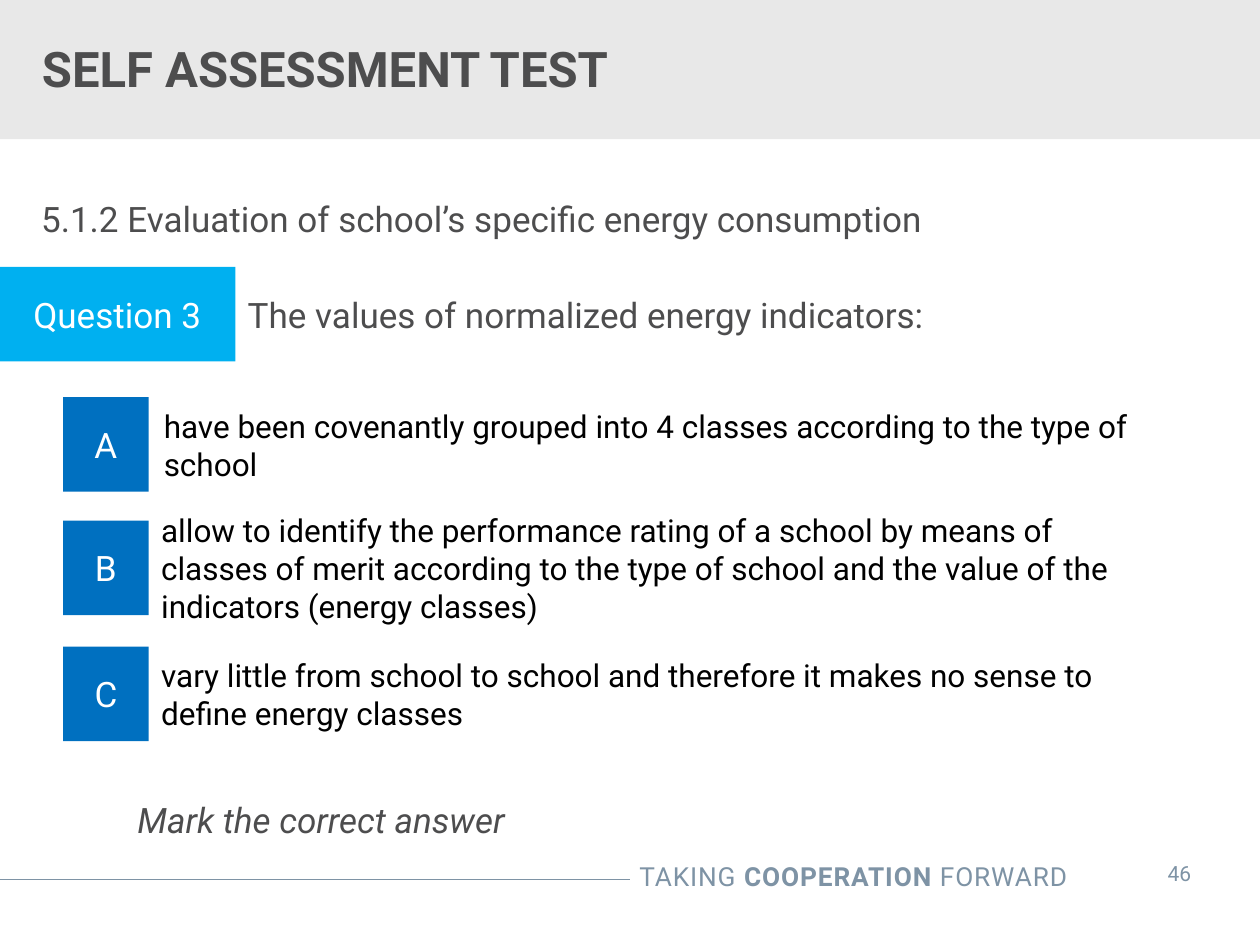
"""Build a self assessment slide with one question and three answers."""
from lxml import etree
from pptx import Presentation
from pptx.dml.color import RGBColor
from pptx.enum import shapes, text
from pptx.oxml import ns
from pptx.util import Pt

GREY = RGBColor(0x4D, 0x4D, 0x4E)
PALE = RGBColor(0xE8, 0xE8, 0xE8)
SLATE = RGBColor(0x7E, 0x93, 0xA5)
SKY = RGBColor(0x00, 0xB0, 0xF0)
BLUE = RGBColor(0x00, 0x70, 0xC0)
WHITE = RGBColor(0xFF, 0xFF, 0xFF)
BLACK = RGBColor(0x00, 0x00, 0x00)
LEFT, MID, RIGHT = text.PP_ALIGN.LEFT, text.PP_ALIGN.CENTER, text.PP_ALIGN.RIGHT
TOP, HALF = text.MSO_ANCHOR.TOP, text.MSO_ANCHOR.MIDDLE

deck = Presentation()
deck.slide_width, deck.slide_height = Pt(720), Pt(540)
slide = deck.slides.add_slide(deck.slide_layouts[6])


def write(words, box, size=20, color=GREY, fill=None, bold=(), italic=False,
          align=LEFT, anchor=HALF, inset=(7.2, 3.6, 7.2, 3.6), wrap=True, space=0):
    place = [Pt(n) for n in box]
    if fill is None:
        shape = slide.shapes.add_textbox(*place)
    else:
        shape = slide.shapes.add_shape(shapes.MSO_SHAPE.RECTANGLE, *place)
        shape.shadow.inherit = False
        shape.fill.solid()
        shape.fill.fore_color.rgb = fill
        shape.line.fill.background()
    frame = shape.text_frame
    frame.word_wrap, frame.vertical_anchor = wrap, anchor
    (frame.margin_left, frame.margin_top,
     frame.margin_right, frame.margin_bottom) = [Pt(n) for n in inset]
    para = frame.paragraphs[0]
    para.alignment = align
    for part in words:
        run = para.add_run()
        run.text = part
        font = run.font
        font.name, font.size, font.color.rgb = "Roboto", Pt(size), color
        font.bold, font.italic = part in bold, italic
        if space:
            run._r.get_or_add_rPr().set("spc", str(space))
    return shape


rule = slide.shapes.add_connector(shapes.MSO_CONNECTOR.STRAIGHT,
                                  Pt(-0.5), Pt(502.5), Pt(360), Pt(502.5))
rule.line.color.rgb, rule.line.width = SLATE, Pt(0.75)
etree.SubElement(rule._element.spPr, ns.qn("a:effectLst"))

write([], (0, 0, 720, 79.5), fill=PALE)
write(["TAKING ", "COOPERATION", " FORWARD"], (279.5, 488, 337.5, 25), size=15,
      color=SLATE, bold=["COOPERATION"], align=RIGHT, anchor=TOP, space=50)
write(["46"], (647.5, 484.5, 53, 29), size=12, color=SLATE, align=MID,
      anchor=TOP, inset=(14.4, 7.2, 14.4, 7.2), wrap=False)

title = "SELF ASSESSMENT TEST"
write([title], (-0.5, 11.5, 519, 54), size=28, bold=[title],
      inset=(24.5, 3.6, 7.2, 3.6))
write(["5.1.2 Evaluation of school’s specific energy consumption"],
      (23.5, 111, 674, 24.5), anchor=TOP, inset=(0, 2, 0, 0))
write(["Mark the correct answer"], (78.5, 456.5, 400, 24), italic=True,
      anchor=TOP, inset=(0, 0, 0, 0))

write(["Question 3"], (-0.5, 152.5, 135, 54), color=WHITE, fill=SKY, align=MID)
write(["The values of normalized energy indicators:"], (134.5, 152.5, 587, 54))

answers = [
    ("A", 86.5, 227, "have been covenantly grouped into 4 classes according to "
     "the type of school"),
    ("B", 85, 297.5, "allow to identify the performance rating of a school by "
     "means of classes of merit according to the type of school and the value "
     "of the indicators (energy classes)"),
    ("C", 85, 369.5, "vary little from school to school and therefore it makes "
     "no sense to define energy classes"),
]
for mark, left, top, words in answers:
    write([mark], (36, top, 49, 54), color=WHITE, fill=BLUE, align=MID)
    write([words], (left, top, 587, 54), size=18, color=BLACK)

deck.save("out.pptx")
